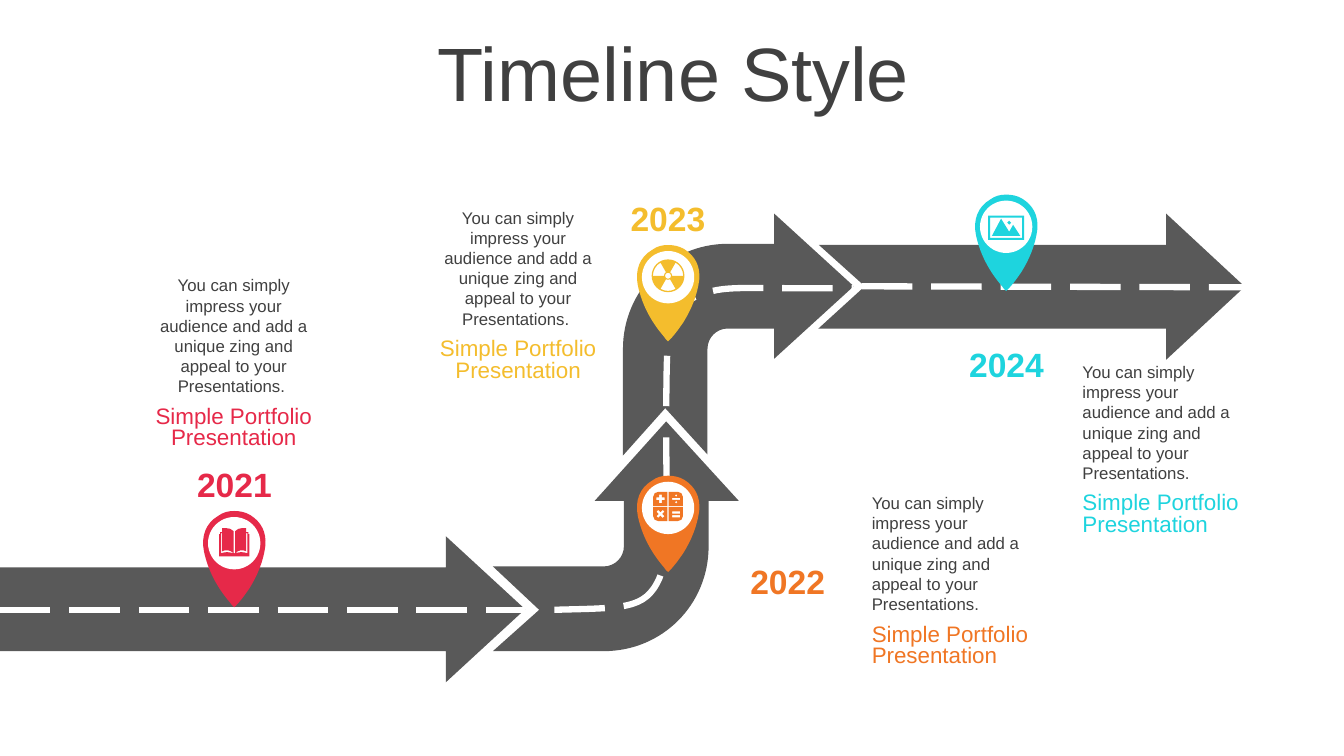
from math import cos, radians, sin, tan

from lxml import etree
from pptx import Presentation
from pptx.dml.color import RGBColor
from pptx.enum.dml import MSO_LINE
from pptx.enum.shapes import MSO_CONNECTOR, MSO_SHAPE
from pptx.enum.text import MSO_ANCHOR, PP_ALIGN
from pptx.oxml.ns import qn
from pptx.util import Pt

ARROW, OVAL = MSO_SHAPE.RIGHT_ARROW, MSO_SHAPE.OVAL
STRAIGHT, DASH = MSO_CONNECTOR.STRAIGHT, MSO_LINE.LONG_DASH
LEFT, CENTER = PP_ALIGN.LEFT, PP_ALIGN.CENTER
TOP, MIDDLE = MSO_ANCHOR.TOP, MSO_ANCHOR.MIDDLE

ROAD, WHITE, INK = "595959", "FFFFFF", "404040"
CAPTION_W, BODY_H = 131, 94.3
BODY = "You can simply impress your audience and add a unique zing and appeal to your Presentations."
HEADING = "Simple Portfolio Presentation"

ROAD_UP = """M 352.1 465.1 L 431.3 465.1 C 473 465.1 506.2 432 506.2 390.2 L 506.2 357.8
 L 527.8 357.8 L 475.9 301 L 424.8 357.8 L 445.7 357.8 L 445.7 390.2
 C 445.7 398.2 439.2 404.6 431.3 404.6 L 352.1 404.6 L 385.2 435.6 Z"""
ROAD_TURN = """M 445 325.4 L 475.2 291.6 L 505.4 324.7 L 505.4 249.1
 C 505.4 241.2 511.9 234.7 519.8 234.7 L 553 234.7 L 553 256.3 L 609.8 204.5 L 553 152.6
 L 553 174.2 L 519.8 174.2 C 478.1 174.2 445 208.1 445 249.1 Z"""
ROAD_END = """M 833 257 L 889.2 204.8 L 833 152.6 L 833 175 L 585 175 L 617.8 204.5
 L 584.6 234.7 L 833 234.7 Z"""
DASHES_UP = "M 396 435.6 C 445.7 434.2 460.8 435.6 470.9 413.3 C 478.8 393.1 475.9 384.5 475.9 301.7"
DASHES_TURN = "M 475.9 290.2 C 476.6 238.3 475.2 221.8 497.5 211.7 C 518.4 203 526.3 206.6 609.8 205.9"
PIN = """M 0 0 C 3.6 0 7.9 0.7 11.5 2.9 C 19.4 7.9 23 15.1 22.3 24.5 C 20.9 36 16.6 46.1 10.8 55.4
 C 7.2 60.5 4.3 64.8 0 68.8 C -1.4 67.7 -2.2 66.6 -2.9 65.5 C -12.2 54.7 -18.7 42.5 -21.6 28.8
 C -23.8 18 -20.2 8.6 -11.5 3.6 C -7.9 0.9 -4.3 0 0 0 Z"""


def color(value):
    return RGBColor.from_string(value)


def polygon(points):
    return "M " + " L ".join(f"{x:.2f} {y:.2f}" for x, y in points) + " Z "


def box(left, top, right, bottom):
    return polygon([(left, top), (right, top), (right, bottom), (left, bottom)])


def arc(x, y, radius, start, end):
    """First point of an arc, and the one curve that draws it."""
    k = 4 / 3 * tan(radians(end - start) / 4)
    c0, s0, c1, s1 = (f(radians(a)) for a in (start, end) for f in (cos, sin))
    units = [(c0, s0), (c0 - k * s0, s0 + k * c0), (c1 + k * s1, s1 - k * c1), (c1, s1)]
    pairs = [f"{x + radius * u:.2f} {y + radius * v:.2f}" for u, v in units]
    return pairs[0], " C " + " ".join(pairs[1:])


def disc(x, y, radius):
    quarters = [arc(x, y, radius, a, a + 90) for a in range(0, 360, 90)]
    return "M " + quarters[0][0] + "".join(curve for _, curve in quarters) + " Z "


def sector(x, y, inner, outer, middle):
    start, end = middle - 30, middle + 30
    first, out_curve = arc(x, y, outer, start, end)
    turn, in_curve = arc(x, y, inner, end, start)
    return f"M {first}{out_curve} L {turn}{in_curve} Z "


# Icons are laid out around the centre of the white disc of a pin.
BOOK = """M 0 7.2 C 3.6 6.5 5.8 5.8 9.4 7.2 L 9.4 -7.2 L 8.6 -7.2 L 8.6 5.8
 C 5.8 4.3 2.9 5 0.7 7.2 L 0.7 -8.6 C 2.2 -10.1 3.6 -10.8 5.8 -10.8 L 8.6 -10.8 L 8.6 -7.9
 L 10.1 -7.9 L 10.1 -6.5 L 10.8 -6.5 L 10.8 9.4 L -10.8 9.4 L -10.8 -6.5 L -10.1 -6.5
 L -10.1 -7.9 L -8.6 -7.9 L -8.6 -10.8 L -5.8 -10.8 C -3.6 -10.8 -1.8 -10.1 -0.4 -8.6
 L -0.4 7 C -2.9 5 -5.8 4.3 -8.6 5.8 L -8.6 -7.2 L -9.4 -7.2 L -9.4 7.2
 C -5.8 5.8 -3.6 6.5 0 7.2 Z"""
CALCULATOR = """M -7 -11.5 L -0.4 -11.5 L -0.4 -1.4 L -10.6 -1.4 L -10.6 -7.9 C -10.6 -10 -9 -11.5 -7 -11.5 Z
 M 0.4 -11.5 L 7 -11.5 C 9 -11.5 10.6 -10 10.6 -7.9 L 10.6 -1.4 L 0.4 -1.4 Z
 M -10.6 -0.7 L -0.4 -0.7 L -0.4 9.4 L -7 9.4 C -9 9.4 -10.6 8 -10.6 6 Z
 M 0.4 -0.7 L 10.6 -0.7 L 10.6 6 C 10.6 8 9 9.4 7 9.4 L 0.4 9.4 Z
 M -6.4 -9.5 L -4.4 -9.5 L -4.4 -7.5 L -2.4 -7.5 L -2.4 -5.5 L -4.4 -5.5 L -4.4 -3.5
 L -6.4 -3.5 L -6.4 -5.5 L -8.4 -5.5 L -8.4 -7.5 L -6.4 -7.5 Z
 M -7 1.4 L -8.3 2.7 L -6.7 4.3 L -8.3 5.9 L -7 7.2 L -5.4 5.6 L -3.8 7.2 L -2.5 5.9
 L -4.1 4.3 L -2.5 2.7 L -3.8 1.4 L -5.4 3 Z """
CALCULATOR += box(2.9, -7.2, 8.6, -5.8) + disc(5.8, -8.9, 0.9) + disc(5.8, -4.1, 0.9)
CALCULATOR += box(2.9, 2.5, 8.6, 4.1) + box(2.9, 5.1, 8.6, 6.7)
RADIATION = disc(0, -1, 11.7) + disc(0, -1, 2.2)
RADIATION += "".join(sector(0, -1, 2.9, 10.8, middle) for middle in (90, 210, 330))
PHOTO = box(-12.9, -7.9, 12.9, 9.4) + box(-11.5, -6.5, 11.5, 7.9) + disc(2.2, -2.9, 1.4)
PHOTO += polygon([(-3.6, -5.8), (2.2, 3.6), (5, -1.4), (10.1, 6.5), (-10.1, 6.5)])

# year, colour, icon, top centre of pin, year box, caption box, caption alignment
MILESTONES = [
    ("2021", "E62949", BOOK, (167.3, 365), (121, 327.6), (101.5, 193), CENTER),
    ("2022", "F07624", CALCULATOR, (477.2, 339.8), (516.2, 396.7), (615.6, 348.5), LEFT),
    ("2023", "F4BD2D", RADIATION, (477.2, 175), (430.6, 137.5), (304.6, 144.7), CENTER),
    ("2024", "1ED4DE", PHOTO, (718.7, 139), (672.5, 241.9), (766.1, 254.9), LEFT),
]


def commands(outline):
    """Split an outline into (letter, points) pairs."""
    tokens = iter(outline.split())
    for letter in tokens:
        count = {"C": 3, "Z": 0}.get(letter, 1)
        yield letter, [(float(next(tokens)), float(next(tokens))) for _ in range(count)]


def bend(sp, steps):
    """Turn the three straight steps that stand for each C into one Bézier curve."""
    nodes = iter(list(next(sp._element.iter(qn("a:path")))))
    for letter, points in steps:
        group = [next(nodes) for _ in points or [letter]]
        if letter == "C":
            curve = etree.Element(qn("a:cubicBezTo"))
            group[0].addprevious(curve)
            for node in group:
                curve.append(node[0])
                node.getparent().remove(node)


class Deck:
    font = "Arial"
    dash_width = 4.5

    def __init__(self, s):
        self.s = s

    def paint(self, sp, fill):
        sp.shadow.inherit = False
        sp.fill.solid()
        sp.fill.fore_color.rgb = color(fill)
        sp.line.fill.background()

    def dash(self, line):
        line.color.rgb = color(WHITE)
        line.width = Pt(self.dash_width)
        line.dash_style = DASH

    def shape(self, kind, x, y, w, h, fill):
        sp = self.s.shapes.add_shape(kind, Pt(x), Pt(y), Pt(w), Pt(h))
        self.paint(sp, fill)
        return sp

    def freeform(self, outline, fill=None, dx=0, dy=0):
        """A closed filled outline, or an open dashed one without a fill."""
        fb = None
        steps = list(commands(outline))
        for letter, points in steps:
            points = [(Pt(x + dx), Pt(y + dy)) for x, y in points]
            if fb is None:
                fb = self.s.shapes.build_freeform(*points[0], scale=1.0)
            elif letter == "M":
                fb.move_to(*points[0])
            else:
                fb.add_line_segments(points, close=letter == "Z")
        sp = fb.convert_to_shape()
        bend(sp, steps)
        if fill:
            self.paint(sp, fill)
        else:
            sp.shadow.inherit = False
            sp.fill.background()
            self.dash(sp.line)

    def dashed_line(self, x1, y1, x2, y2):
        cx = self.s.shapes.add_connector(STRAIGHT, Pt(x1), Pt(y1), Pt(x2), Pt(y2))
        self.dash(cx.line)
        etree.SubElement(cx._element.spPr, qn("a:effectLst"))

    def text(self, x, y, w, h, text, size, ink, align=CENTER, anchor=TOP, bold=False, spacing=1.0):
        tf = self.s.shapes.add_textbox(Pt(x), Pt(y), Pt(w), Pt(h)).text_frame
        tf.word_wrap = True
        tf.vertical_anchor = anchor
        p = tf.paragraphs[0]
        p.alignment, p.line_spacing = align, spacing
        r = p.add_run()
        r.text = text
        r.font.name, r.font.size, r.font.bold = self.font, Pt(size), bold
        r.font.color.rgb = color(ink)

    def pin(self, x, y, fill, icon):
        self.freeform(PIN, fill, x, y)
        self.shape(OVAL, x - 18.7, y + 4.3, 37.4, 37.4, WHITE)
        self.freeform(icon, fill, x, y + 23)


def main():
    prs = Presentation()
    prs.slide_width, prs.slide_height = Pt(960), Pt(540)
    deck = Deck(prs.slides.add_slide(prs.slide_layouts[6]))
    deck.text(25.2, 26.6, 911.5, 56.9, "Timeline Style", 54, INK, anchor=MIDDLE, spacing=0.9)

    deck.freeform(ROAD_TURN, ROAD)
    deck.freeform(ROAD_UP, ROAD)
    start = deck.shape(ARROW, 0, 383, 375.1, 104.4, ROAD)
    start.adjustments[0], start.adjustments[1] = 0.572, 0.543
    deck.freeform(ROAD_END, ROAD)
    deck.dashed_line(0, 435.6, 375.1, 435.6)
    deck.freeform(DASHES_UP)
    deck.freeform(DASHES_TURN)
    deck.dashed_line(615.6, 204.5, 889.2, 205.2)

    for year, ink, icon, pin, label, (x, y), align in MILESTONES:
        deck.pin(*pin, ink, icon)
        deck.text(*label, 92.9, 36, year, 24, ink, anchor=MIDDLE, bold=True)
        body = BODY + " " if align == CENTER else BODY
        deck.text(x, y, CAPTION_W, BODY_H, body, 12, INK, align)
        deck.text(x, y + BODY_H, CAPTION_W, 38.2, HEADING, 16, ink, align, spacing=0.8)

    prs.save("out.pptx")


if __name__ == "__main__":
    main()
